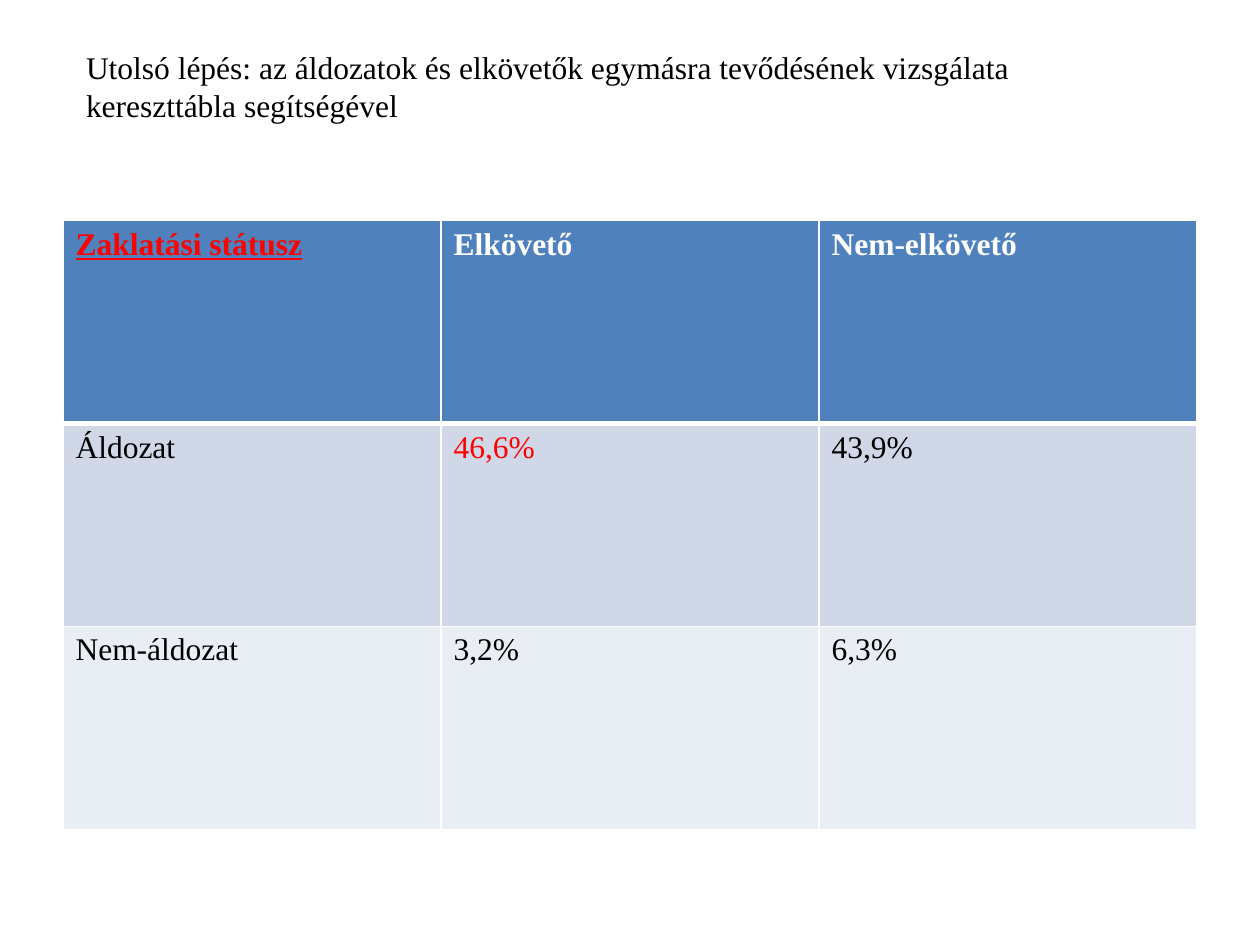
from dataclasses import dataclass

from lxml.etree import SubElement
from pptx import Presentation
from pptx.dml.color import RGBColor
from pptx.enum.text import MSO_ANCHOR, MSO_AUTO_SIZE, PP_ALIGN
from pptx.oxml.ns import qn
from pptx.table import _Cell
from pptx.text.text import TextFrame
from pptx.util import Cm, Pt

COLORS = {
    "black": "000000",
    "white": "FFFFFF",
    "red": "FF0000",
    "header": "4F81BD",
    "victim": "D0D8E8",
    "non_victim": "E9EDF4",
}
FONT = "Times New Roman"
THIN, THICK = 1, 3


@dataclass(frozen=True)
class Entry:
    text: str
    color: str = "black"
    underline: bool = False


@dataclass(frozen=True)
class Status:
    fill: str
    entries: tuple[Entry, ...]
    bold: bool = False
    top: int = THIN
    bottom: int = THIN


STATUSES = (
    Status(
        "header",
        (
            Entry("Zaklatási státusz", "red", underline=True),
            Entry("Elkövető", "white"),
            Entry("Nem-elkövető", "white"),
        ),
        bold=True,
        bottom=THICK,
    ),
    Status(
        "victim",
        (Entry("Áldozat"), Entry("46,6%", "red"), Entry("43,9%")),
        top=THICK,
    ),
    Status("non_victim", (Entry("Nem-áldozat"), Entry("3,2%"), Entry("6,3%"))),
)


def write(frame: TextFrame, text: str, *, color: str = "black", size: float = 18,
          bold: bool = False, underline: bool = False) -> None:
    paragraph = frame.paragraphs[0]
    paragraph.alignment = PP_ALIGN.LEFT
    run = paragraph.add_run()
    run.text = text
    run.font.name = FONT
    run.font.size = Pt(size)
    run.font.bold = bold
    run.font.underline = underline
    run.font.color.rgb = RGBColor.from_string(COLORS[color])


def draw_borders(cell: _Cell, top: int, bottom: int) -> None:
    properties = cell._tc.get_or_add_tcPr()
    for side, width in (("L", THIN), ("R", THIN), ("T", top), ("B", bottom)):
        border = SubElement(properties, qn(f"a:ln{side}"), w=str(Pt(width)))
        fill = SubElement(border, qn("a:solidFill"))
        SubElement(fill, qn("a:srgbClr"), val=COLORS["white"])


def draw_cell(cell: _Cell, entry: Entry, status: Status) -> None:
    draw_borders(cell, status.top, status.bottom)
    cell.fill.solid()
    cell.fill.fore_color.rgb = RGBColor.from_string(COLORS[status.fill])
    write(cell.text_frame, entry.text, color=entry.color,
          bold=status.bold, underline=entry.underline)


def main() -> None:
    """Build the slide with the victim and perpetrator cross table."""
    presentation = Presentation()
    presentation.slide_width, presentation.slide_height = Cm(25.4), Cm(19.05)
    slide = presentation.slides.add_slide(presentation.slide_layouts[5])

    heading = slide.shapes.title
    heading.left, heading.top = Cm(1.48), Cm(0.84)
    heading.width, heading.height = Cm(21.17), Cm(1.8)
    heading.text_frame.word_wrap = True
    heading.text_frame.auto_size = MSO_AUTO_SIZE.SHAPE_TO_FIT_TEXT
    heading.text_frame.vertical_anchor = MSO_ANCHOR.TOP
    write(heading.text_frame, "Utolsó lépés: az áldozatok és elkövetők egymásra "
          "tevődésének vizsgálata kereszttábla segítségével")

    crosstab = slide.shapes.add_table(
        len(STATUSES), len(STATUSES[0].entries),
        Cm(1.27), Cm(4.45), Cm(22.86), Cm(12.27),
    ).table
    for row, status in enumerate(STATUSES):
        for column, entry in enumerate(status.entries):
            draw_cell(crosstab.cell(row, column), entry, status)

    presentation.save("out.pptx")


if __name__ == "__main__":
    main()
